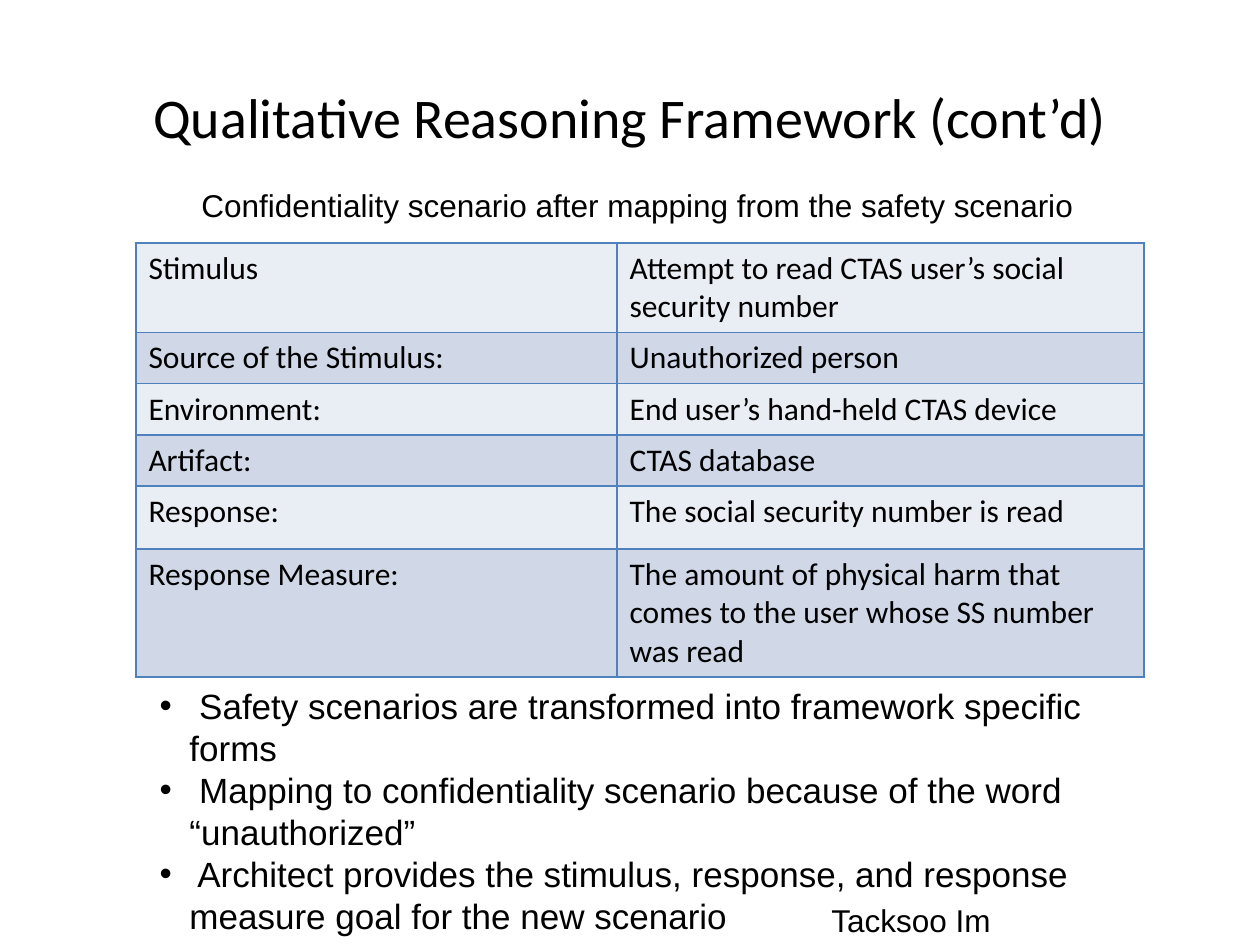
from dataclasses import dataclass
from typing import NamedTuple

from lxml.etree import SubElement
from pptx import Presentation
from pptx.dml.color import RGBColor as RGB
from pptx.enum.text import MSO_ANCHOR as Anchor, MSO_AUTO_SIZE as AutoSize, PP_ALIGN as Align
from pptx.oxml.ns import qn
from pptx.util import Cm, Pt


@dataclass(frozen=True)
class Theme:
    """Fonts, type sizes and colours of the slide."""
    heading: str = "Calibri"
    body: str = "Arial"
    title_size: int = 32
    text_size: int = 18
    bullet_size: int = 20
    ink: str = "000000"
    bands: tuple[str, str] = ("E9EDF4", "D0D8E8")
    border: str = "4F81BD"


class Box(NamedTuple):
    """Position and size in centimetres."""
    left: float
    top: float
    width: float
    height: float

    def lengths(self) -> list[Cm]:
        """Return the four values as lengths."""
        return [Cm(v) for v in self]


class Note(NamedTuple):
    """Text box with one or more paragraphs."""
    box: Box
    lines: tuple[str, ...]
    size: int
    bulleted: bool = False
    wrap: bool = True


class Row(NamedTuple):
    """Scenario label, its value and the row height in centimetres."""
    label: str
    value: str
    height: float


THEME = Theme()
TITLE = "Qualitative Reasoning Framework (cont’d)"
TITLE_BOX = Box(1.27, 0.76, 22.86, 3.18)
TABLE_BOX = Box(2.74, 4.9, 20.32, 8.65)
COLUMN_WIDTHS = (9.7, 10.62)
SCENARIO = (
    Row("Stimulus", "Attempt to read CTAS user’s social security number", 1.78),
    Row("Source of the Stimulus:", "Unauthorized person", 1.02),
    Row("Environment:", "End user’s hand-held CTAS device", 1.02),
    Row("Artifact:", "CTAS database", 1.02),
    Row("Response:", "The social security number is read", 1.27),
    Row("Response Measure:",
        "The amount of physical harm that comes to the user whose SS number was read", 2.54),
)
NOTES = (
    Note(Box(3.81, 3.63, 19.48, 1.02),
         ("Confidentiality scenario after mapping from the safety scenario",), THEME.text_size),
    Note(Box(2.97, 13.67, 20.52, 5.38),
         (" Safety scenarios are transformed into framework specific forms",
          " Mapping to confidentiality scenario because of the word “unauthorized”",
          " Architect provides the stimulus, response, and response measure goal for the new scenario"),
         THEME.bullet_size, bulleted=True),
    Note(Box(16.51, 18.03, 3.76, 1.02), ("Tacksoo Im",), THEME.text_size, wrap=False),
)


def format_runs(tf, font: str, size: int) -> None:
    """Apply font, size and ink colour to every run."""
    for p in tf.paragraphs:
        for r in p.runs:
            r.font.name = font
            r.font.size = Pt(size)
            r.font.color.rgb = RGB.from_string(THEME.ink)


def add_bullet(p) -> None:
    """Give a paragraph a hanging bullet."""
    pr = p._p.get_or_add_pPr()
    pr.set("marL", str(Cm(0.6)))
    pr.set("indent", str(-Cm(0.6)))
    SubElement(pr, qn("a:buFont"), typeface=THEME.body)
    SubElement(pr, qn("a:buChar"), char="•")


def add_note(s, note: Note) -> None:
    """Draw a text box."""
    tf = s.shapes.add_textbox(*note.box.lengths()).text_frame
    tf.text = "\n".join(note.lines)
    tf.word_wrap = note.wrap
    tf.auto_size = AutoSize.SHAPE_TO_FIT_TEXT
    format_runs(tf, THEME.body, note.size)
    if note.bulleted:
        for p in tf.paragraphs:
            add_bullet(p)


def style_cell(cell, fill: str) -> None:
    """Set borders, fill and type of a table cell."""
    pr = cell._tc.get_or_add_tcPr()
    for side in ("lnL", "lnR", "lnT", "lnB"):
        ln = SubElement(pr, qn(f"a:{side}"), w=str(Pt(1)))
        SubElement(SubElement(ln, qn("a:solidFill")), qn("a:srgbClr"), val=THEME.border)
    cell.fill.solid()
    cell.fill.fore_color.rgb = RGB.from_string(fill)
    format_runs(cell.text_frame, THEME.heading, THEME.text_size)


def add_scenario(s, rows: tuple[Row, ...]) -> None:
    """Draw the scenario table with alternating bands."""
    table = s.shapes.add_table(len(rows), len(COLUMN_WIDTHS), *TABLE_BOX.lengths()).table
    table.first_row = table.horz_banding = False
    for column, width in zip(table.columns, COLUMN_WIDTHS):
        column.width = Cm(width)
    for i, row in enumerate(rows):
        table.rows[i].height = Cm(row.height)
        for j, text in enumerate((row.label, row.value)):
            cell = table.cell(i, j)
            cell.text_frame.text = text
            style_cell(cell, THEME.bands[i % 2])


def add_title(s, text: str) -> None:
    """Place and format the title placeholder."""
    sp = s.shapes.title
    sp.left, sp.top, sp.width, sp.height = TITLE_BOX.lengths()
    tf = sp.text_frame
    tf.text = text
    tf.vertical_anchor = Anchor.MIDDLE
    tf.paragraphs[0].alignment = Align.CENTER
    format_runs(tf, THEME.heading, THEME.title_size)


def main() -> None:
    """Build and save the slide."""
    prs = Presentation()
    prs.slide_width, prs.slide_height = Cm(25.4), Cm(19.05)
    s = prs.slides.add_slide(prs.slide_layouts[5])
    add_title(s, TITLE)
    add_scenario(s, SCENARIO)
    for note in NOTES:
        add_note(s, note)
    prs.save("out.pptx")


if __name__ == "__main__":
    main()
